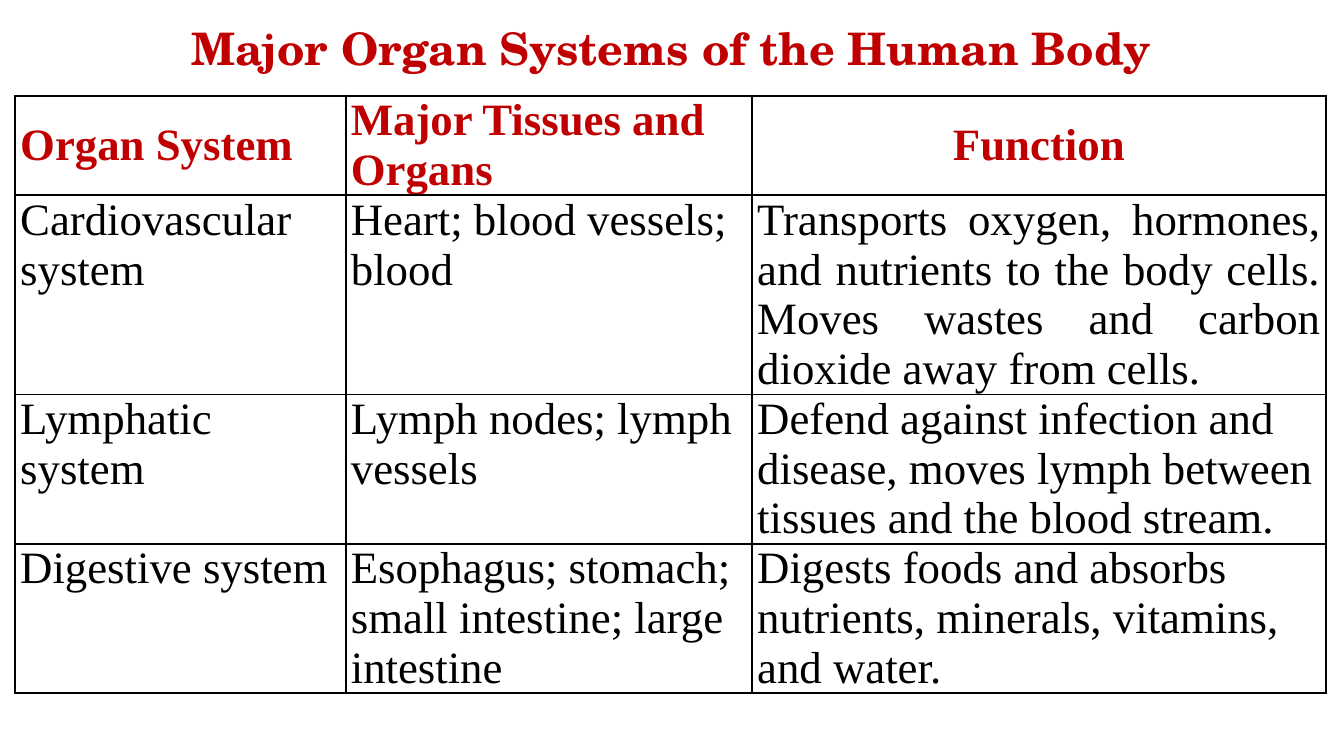
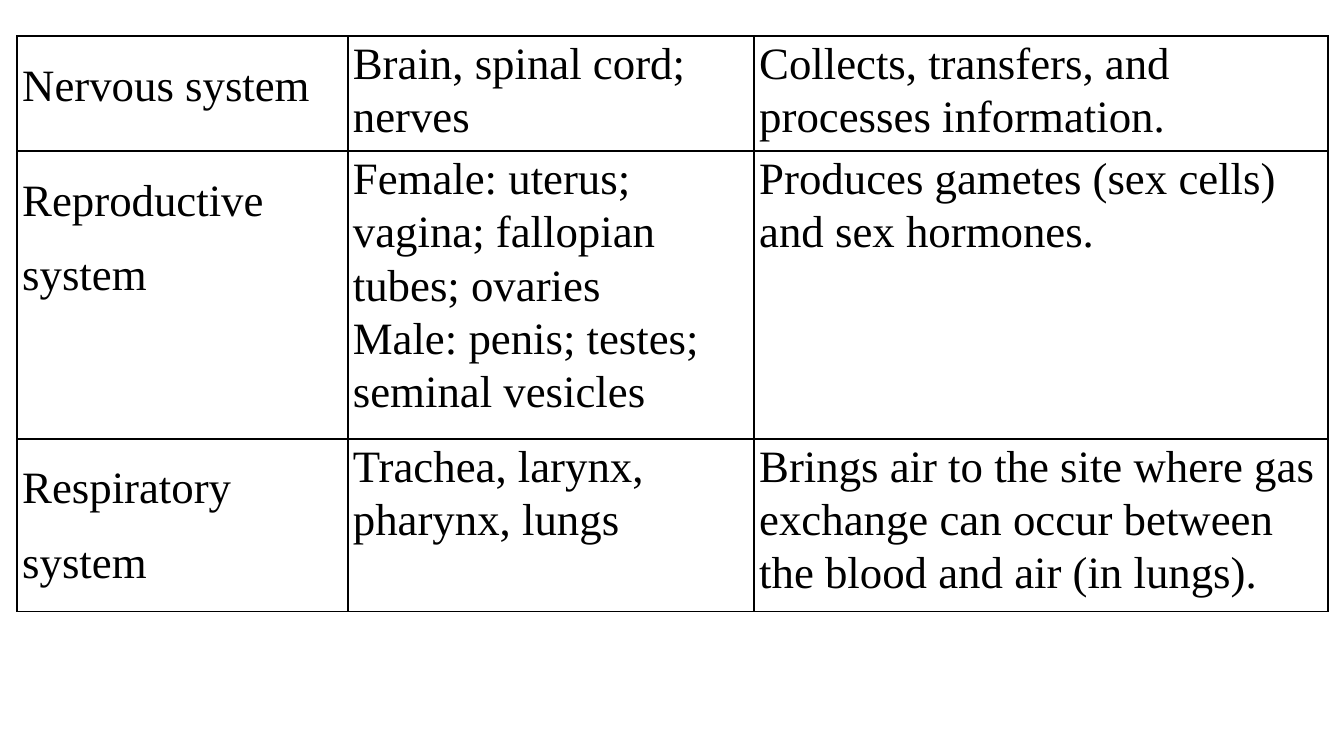
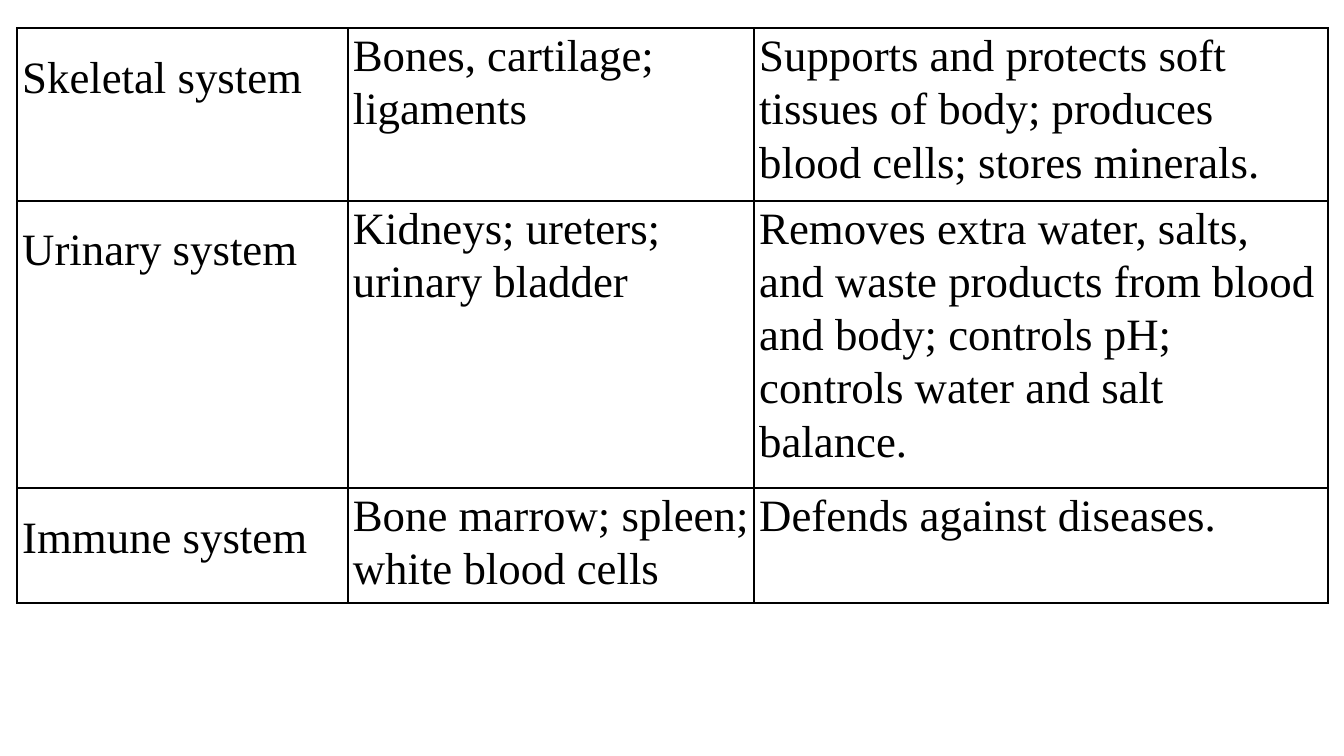
from lxml import etree
from pptx import Presentation
from pptx import util as u
from pptx.dml import color
from pptx.enum import text
from pptx.oxml import ns

LEFT, CENTER, JUSTIFY = text.PP_ALIGN.LEFT, text.PP_ALIGN.CENTER, text.PP_ALIGN.JUSTIFY


def rgb(value):
    return color.RGBColor.from_string(value)


def write(frame, content, font="Times New Roman", size=32, ink="000000", bold=False,
          align=LEFT, spacing=1):
    frame.word_wrap = True
    for index, line in enumerate(content.split("\n")):
        paragraph = frame.add_paragraph() if index else frame.paragraphs[0]
        paragraph.alignment = align
        paragraph.line_spacing = spacing
        run = paragraph.add_run()
        run.text = line
        run.font.name = font
        run.font.size = u.Pt(size)
        run.font.bold = bold
        run.font.color.rgb = rgb(ink)


class Deck:
    accent = "C00000"
    border = "000000"
    border_width = 1.5
    title_font = "TeX Gyre Schola"
    columns = (3.28, 4.03, 5.69)
    padding = 0.05

    def __init__(self):
        self.presentation = Presentation()
        self.presentation.slide_width = u.Inches(13.33)
        self.presentation.slide_height = u.Inches(7.5)
        self.slide = None

    def add_slide(self):
        self.slide = self.presentation.slides.add_slide(self.presentation.slide_layouts[6])

    def title(self, content):
        box = self.slide.shapes.add_textbox(
            u.Inches(1.75), u.Inches(0.16), u.Inches(9.83), u.Inches(0.64))
        write(box.text_frame, content, font=self.title_font, ink=self.accent,
              bold=True, align=CENTER)

    def outline(self, cell):
        properties = cell._tc.get_or_add_tcPr()
        for index, side in enumerate(("lnL", "lnR", "lnT", "lnB")):
            line = etree.Element(ns.qn(f"a:{side}"), w=str(u.Pt(self.border_width)))
            fill = etree.SubElement(line, ns.qn("a:solidFill"))
            etree.SubElement(fill, ns.qn("a:srgbClr"), val=self.border)
            properties.insert(index, line)

    def table(self, left, top, rows, line_counts, line_height, styles, formats=None):
        heights = [count * line_height for count in line_counts]
        table = self.slide.shapes.add_table(
            len(rows), len(self.columns), u.Inches(left), u.Inches(top),
            u.Inches(sum(self.columns)), u.Inches(sum(heights))).table
        table.first_row = table.horz_banding = False
        for column, width in zip(table.columns, self.columns):
            column.width = u.Inches(width)
        for row, height in zip(table.rows, heights):
            row.height = u.Inches(height)
        for row_index, row in enumerate(rows):
            for column_index, content in enumerate(row):
                cell = table.cell(row_index, column_index)
                cell.margin_left = cell.margin_right = u.Inches(self.padding)
                cell.margin_top = cell.margin_bottom = 0
                cell.fill.background()
                self.outline(cell)
                special = (formats or {}).get((row_index, column_index), {})
                write(cell.text_frame, content, **{**styles[column_index], **special})


OVERVIEW = [
    ("Organ System", "Major Tissues and Organs", "Function"),
    ("Cardiovascular system", "Heart; blood vessels; blood",
     "Transports oxygen, hormones, and nutrients to the body cells. "
     "Moves wastes and carbon dioxide away from cells."),
    ("Lymphatic system", "Lymph nodes; lymph vessels",
     "Defend against infection and disease, moves lymph between tissues and the blood stream."),
    ("Digestive system", "Esophagus; stomach; small intestine; large intestine",
     "Digests foods and absorbs nutrients, minerals, vitamins, and water."),
]
CONTINUATIONS = [
    (0.36, (2, 5, 3), [
        ("Nervous system", "Brain, spinal cord; nerves",
         "Collects, transfers, and processes information."),
        ("Reproductive system",
         "Female: uterus; vagina; fallopian tubes; ovaries\n"
         "Male: penis; testes; seminal vesicles",
         "Produces gametes (sex cells) and sex hormones."),
        ("Respiratory system", "Trachea, larynx, pharynx, lungs",
         "Brings air to the site where gas exchange can occur between "
         "the blood and air (in lungs)."),
    ]),
    (0.28, (3, 5, 2), [
        ("Skeletal system", "Bones, cartilage; ligaments",
         "Supports and protects soft tissues of body; produces blood cells; stores minerals."),
        ("Urinary system", "Kidneys; ureters; urinary bladder",
         "Removes extra water, salts, and waste products from blood and body; "
         "controls pH; controls water and salt balance."),
        ("Immune system", "Bone marrow; spleen; white blood cells",
         "Defends against diseases."),
    ]),
]


def main():
    deck = Deck()
    heading = {"ink": deck.accent, "bold": True}
    deck.add_slide()
    deck.table(0.15, 0.95, OVERVIEW, (2, 4, 3, 3), 0.49, [{}, {}, {}], {
        (0, 0): {**heading, "spacing": 1.5},
        (0, 1): heading,
        (0, 2): {**heading, "spacing": 1.5, "align": CENTER},
        (1, 2): {"align": JUSTIFY},
    })
    deck.title("Major Organ Systems of the Human Body")
    styles = [{"spacing": 1.5}, {"spacing": 1.07}, {"spacing": 1.07}]
    for top, line_counts, rows in CONTINUATIONS:
        deck.add_slide()
        deck.table(0.17, top, rows, line_counts, 0.57, styles)
    deck.presentation.save("out.pptx")


if __name__ == "__main__":
    main()
